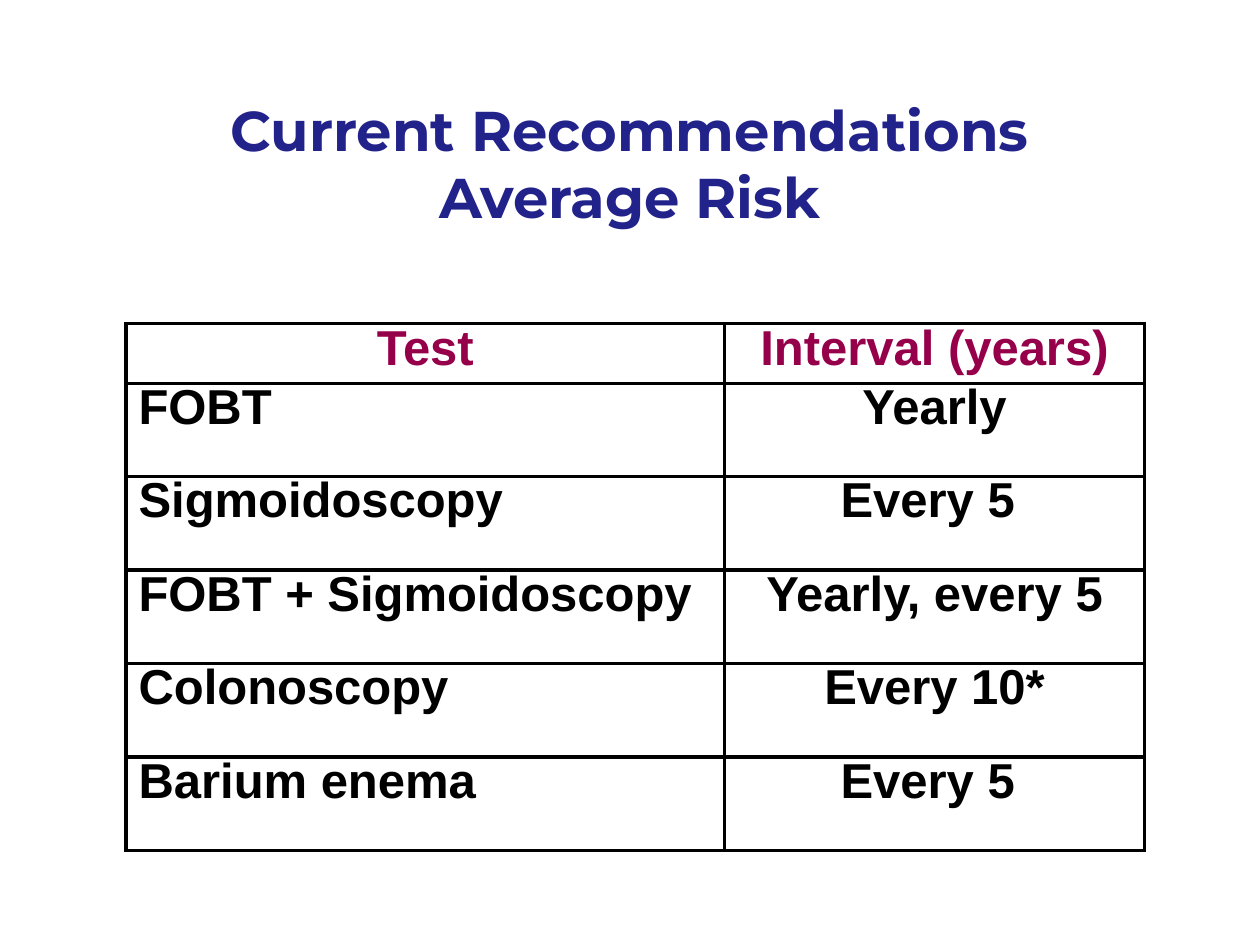
from lxml import etree
from pptx import Presentation
from pptx import util as u
from pptx.dml.color import RGBColor
from pptx.enum import text
from pptx.oxml import ns

Pt = u.Pt
hues = {"title": "22228B", "head": "96004B", "body": "000000",
        "line": "000000", "back": "FFFFFF"}
rows = [
    ("Test", "Interval (years)"),
    ("FOBT", "Yearly"),
    ("Sigmoidoscopy", "Every 5 "),
    ("FOBT + Sigmoidoscopy", "Yearly, every 5"),
    ("Colonoscopy", "Every 10*"),
    ("Barium enema", "Every 5 "),
]


def add_run(para, words, face, size, hue):
    run = para.add_run()
    run.text = words
    run.font.name = face
    run.font.size = Pt(size)
    run.font.bold = True
    run.font.color.rgb = RGBColor.from_string(hues[hue])


def add_edges(cell):
    props = cell._tc.get_or_add_tcPr()
    for spot, side in enumerate(("lnL", "lnR", "lnT", "lnB")):
        edge = etree.Element(ns.qn("a:" + side), w=str(Pt(2.25)))
        fill = etree.SubElement(edge, ns.qn("a:solidFill"))
        etree.SubElement(fill, ns.qn("a:srgbClr"), val=hues["line"])
        props.insert(spot, edge)


deck = Presentation()
deck.slide_width, deck.slide_height = Pt(720), Pt(540)
slide = deck.slides.add_slide(deck.slide_layouts[5])

title = slide.shapes.title
title.left, title.top, title.width, title.height = Pt(54), Pt(48), Pt(612), Pt(90)
frame = title.text_frame
frame.auto_size = text.MSO_AUTO_SIZE.NONE
frame.vertical_anchor = text.MSO_ANCHOR.MIDDLE
para = frame.paragraphs[0]
para.alignment = text.PP_ALIGN.CENTER
add_run(para, "Current Recommendations", "Montserrat", 32, "title")
para.add_line_break()
add_run(para, "Average Risk", "Montserrat", 32, "title")

grid = slide.shapes.add_table(len(rows), 2, Pt(72), Pt(185), Pt(582), Pt(301)).table
grid.columns[0].width, grid.columns[1].width = Pt(342), Pt(240)
for r, row in enumerate(rows):
    grid.rows[r].height = Pt(53.4 if r else 34)
    for c, words in enumerate(row):
        cell = grid.cell(r, c)
        cell.fill.solid()
        cell.fill.fore_color.rgb = RGBColor.from_string(hues["back"])
        add_edges(cell)
        para = cell.text_frame.paragraphs[0]
        para.line_spacing = 0.8
        left = r > 0 and c == 0
        para.alignment = text.PP_ALIGN.LEFT if left else text.PP_ALIGN.CENTER
        add_run(para, words, "Arial", 28, "body" if r else "head")

deck.save("out.pptx")
